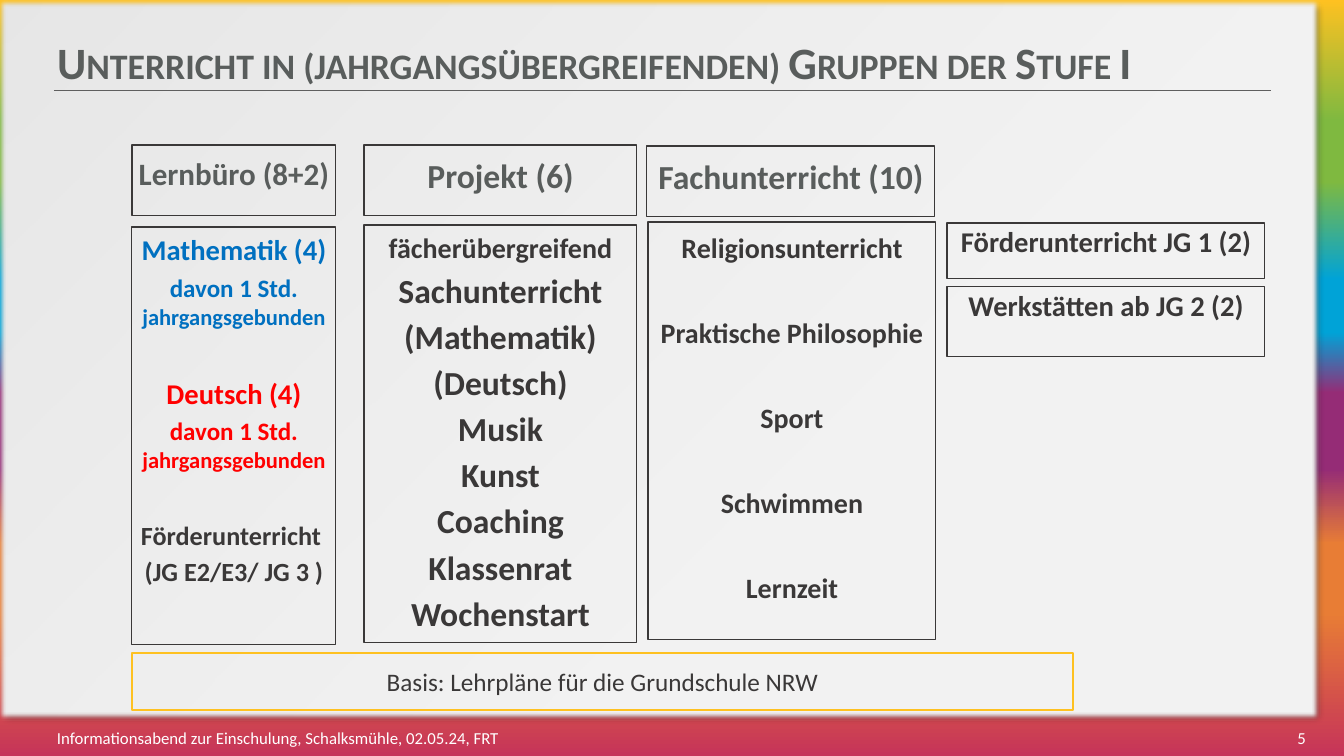
"""Build the slide on teaching in mixed-age groups of Stufe I."""
from lxml import etree
from pptx import Presentation
from pptx import util as u
from pptx.dml.color import RGBColor
from pptx.enum import shapes, text
from pptx.oxml import ns

SCALE = 12192000 / 1344
FONT = "Calibri"
INK = RGBColor(0x3A, 0x38, 0x38)
GREY = RGBColor(0x59, 0x5D, 0x5C)
RULE = RGBColor(0x5F, 0x5F, 0x5F)
WHITE = RGBColor(0xFF, 0xFF, 0xFF)
BLUE = RGBColor(0x00, 0x70, 0xC0)
RED = RGBColor(0xFF, 0x00, 0x00)
YELLOW = RGBColor(0xFE, 0xC1, 0x21)
GREEN = RGBColor(0x7F, 0xB9, 0x40)
CYAN = RGBColor(0x00, 0xA3, 0xD7)
PURPLE = RGBColor(0x95, 0x2C, 0x76)
ORANGE = RGBColor(0xE8, 0x7D, 0x35)
CRIMSON = RGBColor(0xC6, 0x34, 0x59)
SHADE = RGBColor(0xE6, 0xE6, 0xE6)
MIST = RGBColor(0xED, 0xED, 0xED)
PAPER = RGBColor(0xF2, 0xF2, 0xF2)
BLACK = RGBColor(0x00, 0x00, 0x00)

RAINBOW = [(0, YELLOW), (16, GREEN), (24, GREEN), (37, CYAN), (44, CYAN),
           (52, PURPLE), (62, PURPLE), (72, ORANGE), (81, ORANGE), (100, CRIMSON)]
PANEL = [(0, SHADE), (35, MIST), (64, PAPER), (100, PAPER)]
PROJECT = ["Sachunterricht", "(Mathematik)", "(Deutsch)", "Musik", "Kunst",
           "Coaching", "Klassenrat", "Wochenstart"]
SUBJECTS = ["Religionsunterricht", "Praktische Philosophie", "Sport",
            "Schwimmen", "Lernzeit"]


def px(length):
    """Turn pixels into EMU."""
    return u.Emu(round(length * SCALE))


def add_xml(parent, tag, **attributes):
    """Append a DrawingML element."""
    names = {name: str(value) for name, value in attributes.items()}
    return etree.SubElement(parent, ns.qn(tag), names)


def place(shape, box):
    """Move and size a shape."""
    shape.left, shape.top, shape.width, shape.height = map(px, box)


def add_rectangle(slide, box):
    """Add a plain rectangle without fill or shadow."""
    shape = slide.shapes.add_shape(shapes.MSO_SHAPE.RECTANGLE, *map(px, box))
    shape.shadow.inherit = False
    shape.fill.background()
    return shape


def add_gradient(slide, box, stops, angle):
    """Add a borderless rectangle with a linear gradient."""
    shape = add_rectangle(slide, box)
    shape.line.fill.background()
    shape.fill.gradient()
    shape.fill.gradient_angle = 360 - angle
    stop_list = shape.element.spPr.find(".//" + ns.qn("a:gsLst"))
    for stop in list(stop_list):
        stop_list.remove(stop)
    for position, colour in stops:
        stop = add_xml(stop_list, "a:gs", pos=position * 1000)
        add_xml(stop, "a:srgbClr", val=colour)
    return shape


def add_soft_shadow(shape):
    """Give a shape a shadow and soft edges."""
    effects = shape.element.spPr.find(ns.qn("a:effectLst"))
    shadow = add_xml(effects, "a:outerShdw", blurRad=u.Pt(4), dist=u.Pt(3),
                     dir=2700000, algn="tl", rotWithShape=0)
    colour = add_xml(shadow, "a:srgbClr", val=BLACK)
    add_xml(colour, "a:alpha", val=40000)
    add_xml(effects, "a:softEdge", rad=u.Pt(2.5))


def add_rule(slide, left, right, y):
    """Add the thin rule under the title."""
    line = slide.shapes.add_connector(
        shapes.MSO_CONNECTOR.STRAIGHT, px(left), px(y), px(right), px(y))
    line.line.color.rgb = RULE
    line.line.width = u.Pt(0.5)
    add_xml(line.element.spPr, "a:effectLst")


def format_run(run, size, colour, bold):
    """Set the font of a run."""
    run.font.name = FONT
    run.font.size = u.Pt(size)
    run.font.bold = bold
    run.font.color.rgb = colour


def remove_bullet(paragraph):
    """Drop the bullet and the hanging indent."""
    properties = paragraph._p.get_or_add_pPr()
    properties.set("marL", "0")
    properties.set("indent", "0")
    add_xml(properties, "a:buNone")


def write(shape, lines, spacing=1.0, align=text.PP_ALIGN.CENTER,
          anchor=text.MSO_ANCHOR.TOP, bold=True):
    """Fill a shape with lines of (runs, colour, space after)."""
    frame = shape.text_frame
    frame.word_wrap = True
    frame.auto_size = text.MSO_AUTO_SIZE.NONE
    frame.vertical_anchor = anchor
    frame.margin_left = frame.margin_right = px(4)
    frame.margin_top = frame.margin_bottom = px(4)
    frame.text = "\n".join("" for _ in lines)
    for paragraph, (runs, colour, after) in zip(frame.paragraphs, lines):
        paragraph.alignment = align
        paragraph.line_spacing = spacing
        paragraph.space_before = u.Pt(0)
        paragraph.space_after = u.Pt(after)
        if shape.is_placeholder:
            remove_bullet(paragraph)
        for words, size in runs:
            run = paragraph.add_run()
            run.text = words
            format_run(run, size, colour, bold)


def line(words, size, colour=INK, after=3):
    """Describe a line with a single run."""
    return [(words, size)], colour, after


def core_subject(name, colour):
    """Describe a core subject and its note."""
    note = [("davon 1 Std. ", 17.9), ("jahrgangsgebunden", 16.1)]
    return [line(name, 20.4, colour), (note, colour, 31.5)]


def frame_box(shape, colour=INK, width=0.75):
    """Outline a box."""
    shape.line.color.rgb = colour
    shape.line.width = u.Pt(width)


def add_box(slide, box, lines, spacing):
    """Add an outlined box with centred bold text."""
    shape = add_rectangle(slide, box)
    frame_box(shape)
    write(shape, lines, spacing)


def add_label(slide, box, words, align):
    """Add a white text in the footer."""
    label = slide.shapes.add_textbox(*map(px, box))
    write(label, [line(words, 12, WHITE, 0)], align=align,
          anchor=text.MSO_ANCHOR.MIDDLE, bold=False)


def add_backdrop(slide):
    """Draw the rainbow edge, the panel and the title rule."""
    add_gradient(slide, (0, 0, 1344, 756), RAINBOW, 90)
    add_soft_shadow(add_gradient(slide, (-1, 0, 1322, 721), PANEL, 45))
    add_rule(slide, 54, 1271, 90)
    for placeholder in list(slide.placeholders):
        slide.shapes.element.append(placeholder.element)


def fill_placeholders(slide):
    """Write the title and the first column heading."""
    title, heading = slide.shapes.title, slide.placeholders[1]
    place(title, (53, 18, 1129, 71))
    write(title, [line("Unterricht in (jahrgangsübergreifenden) Gruppen der Stufe I",
                       32, GREY, 0)],
          0.9, text.PP_ALIGN.LEFT, text.MSO_ANCHOR.BOTTOM)
    title.text_frame.margin_bottom = 0
    title.text_frame.paragraphs[0].runs[0].font._element.set("cap", "small")
    place(heading, (132, 145, 204, 71))
    frame_box(heading)
    write(heading, [line("Lernbüro (8+2)", 22.2, GREY)], 1.14)


def main():
    """Build and save the slide."""
    presentation = Presentation()
    presentation.slide_width, presentation.slide_height = px(1344), px(756)
    slide = presentation.slides.add_slide(presentation.slide_layouts[1])
    add_backdrop(slide)
    fill_placeholders(slide)
    left, right = text.PP_ALIGN.LEFT, text.PP_ALIGN.RIGHT
    add_label(slide, (53, 719, 761, 37),
              "Informationsabend zur Einschulung, Schalksmühle, 02.05.24, FRT", left)
    add_label(slide, (1254, 719, 56, 37), "5", right)

    office = core_subject("Mathematik (4)", BLUE) + core_subject("Deutsch (4)", RED)
    office += [line("Förderunterricht ", 18.7), line("(JG E2/E3/ JG 3 )", 18.7)]
    project = [line("fächerübergreifend", 20)] + [line(name, 24) for name in PROJECT]
    subjects = [line(name, 20, after=33.4) for name in SUBJECTS]
    for box, lines, spacing in [
        ((132, 227, 204, 418), office, 1.04),
        ((364, 145, 273, 71), [line("Projekt (6)", 24, GREY)], 1.14),
        ((364, 225, 273, 418), project, 1.04),
        ((647, 146, 288, 71), [line("Fachunterricht (10)", 24, GREY)], 1.14),
        ((648, 222, 288, 418), subjects, 1.14),
        ((947, 223, 318, 56), [line("Förderunterricht JG 1 (2)", 20.4)], 0.94),
        ((947, 287, 318, 70), [line("Werkstätten ab JG 2 (2)", 20.4)], 0.94),
    ]:
        add_box(slide, box, lines, spacing)

    basis = add_rectangle(slide, (132, 653, 941, 57))
    frame_box(basis, YELLOW, 1)
    write(basis, [line("Basis: Lehrpläne für die Grundschule NRW", 18, after=0)],
          anchor=text.MSO_ANCHOR.MIDDLE, bold=False)
    presentation.save("out.pptx")


if __name__ == "__main__":
    main()
